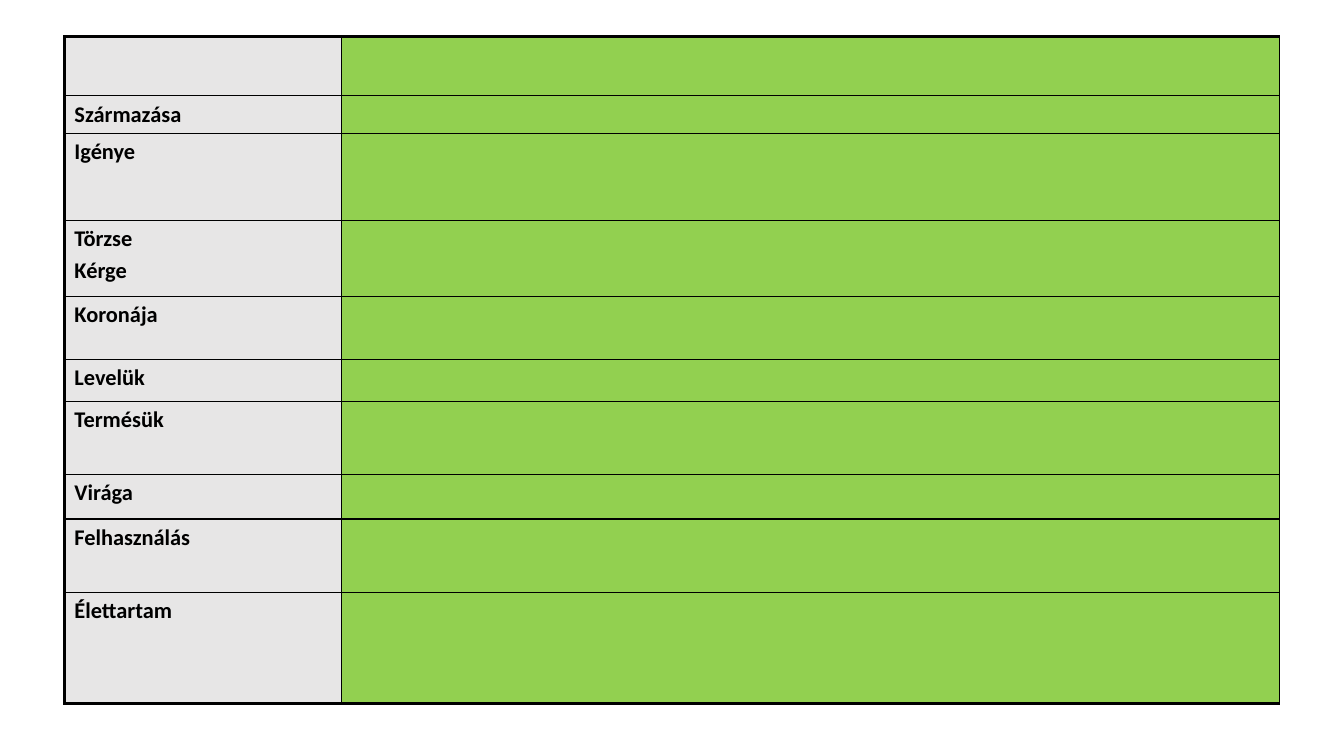
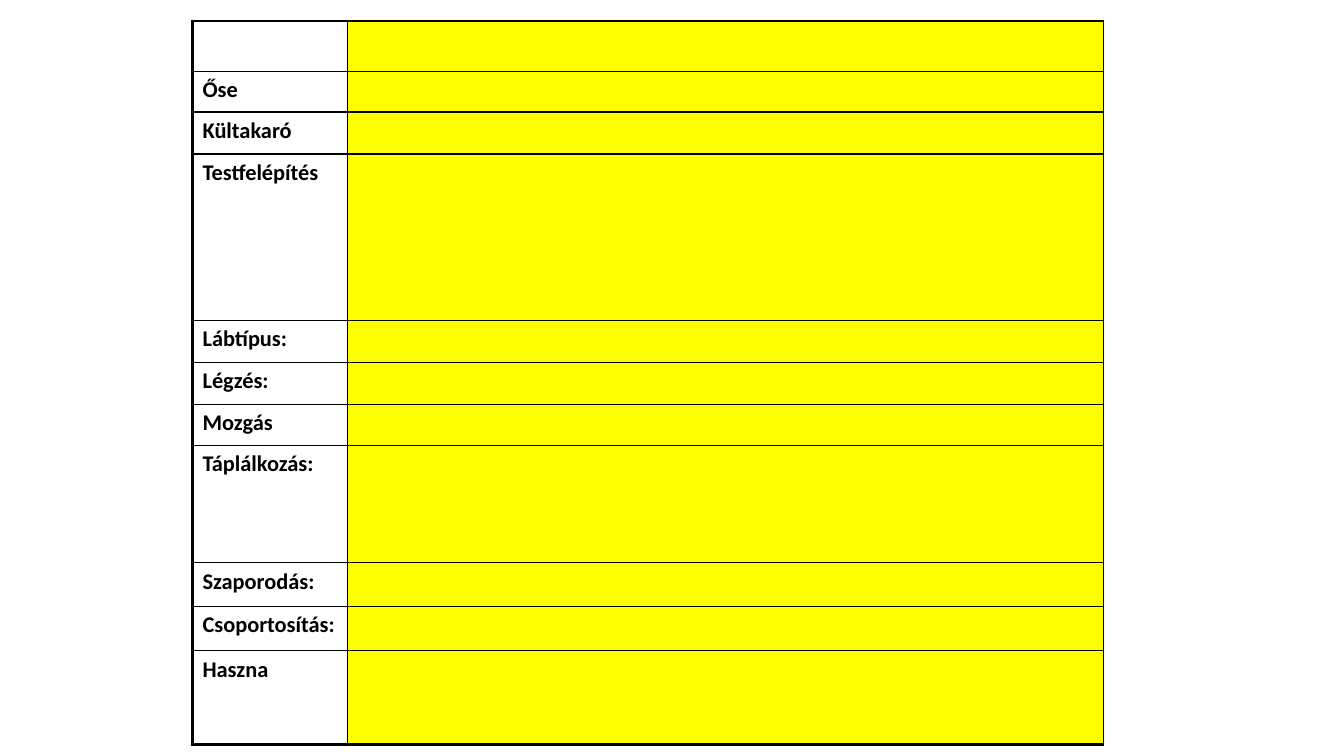
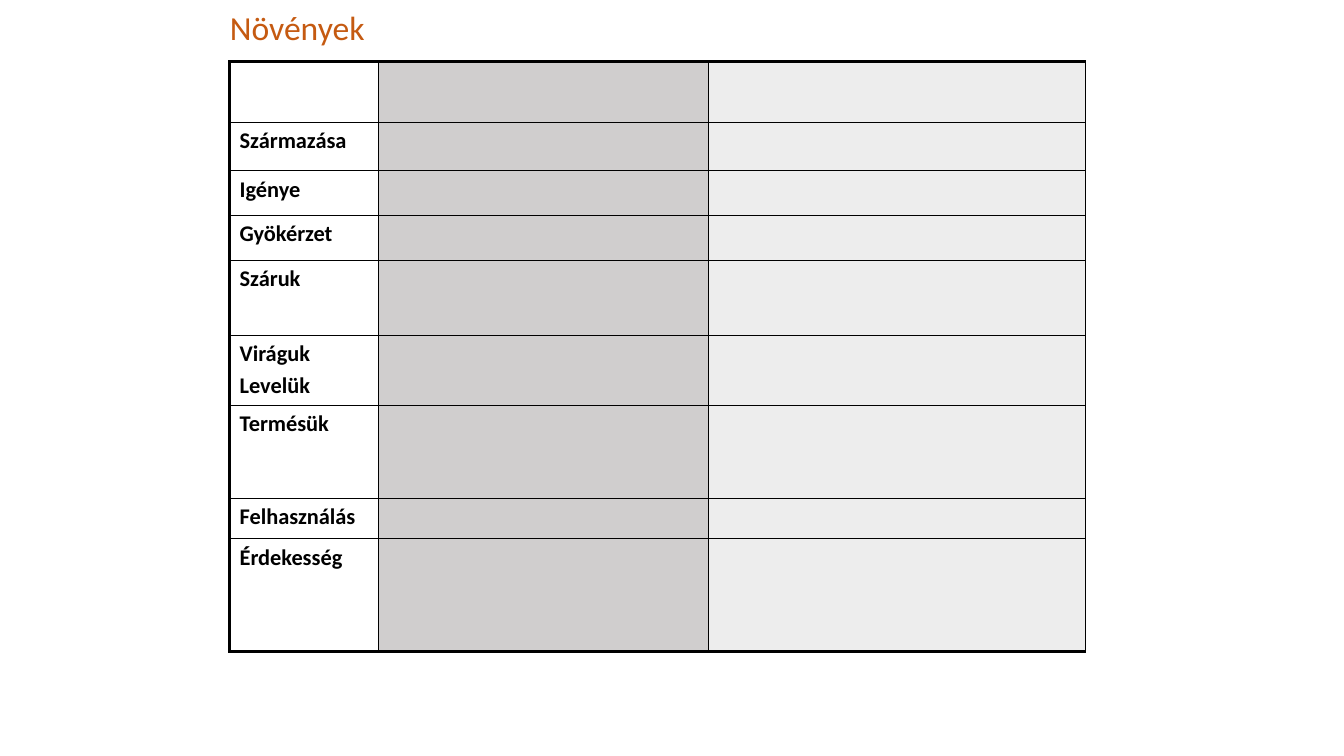
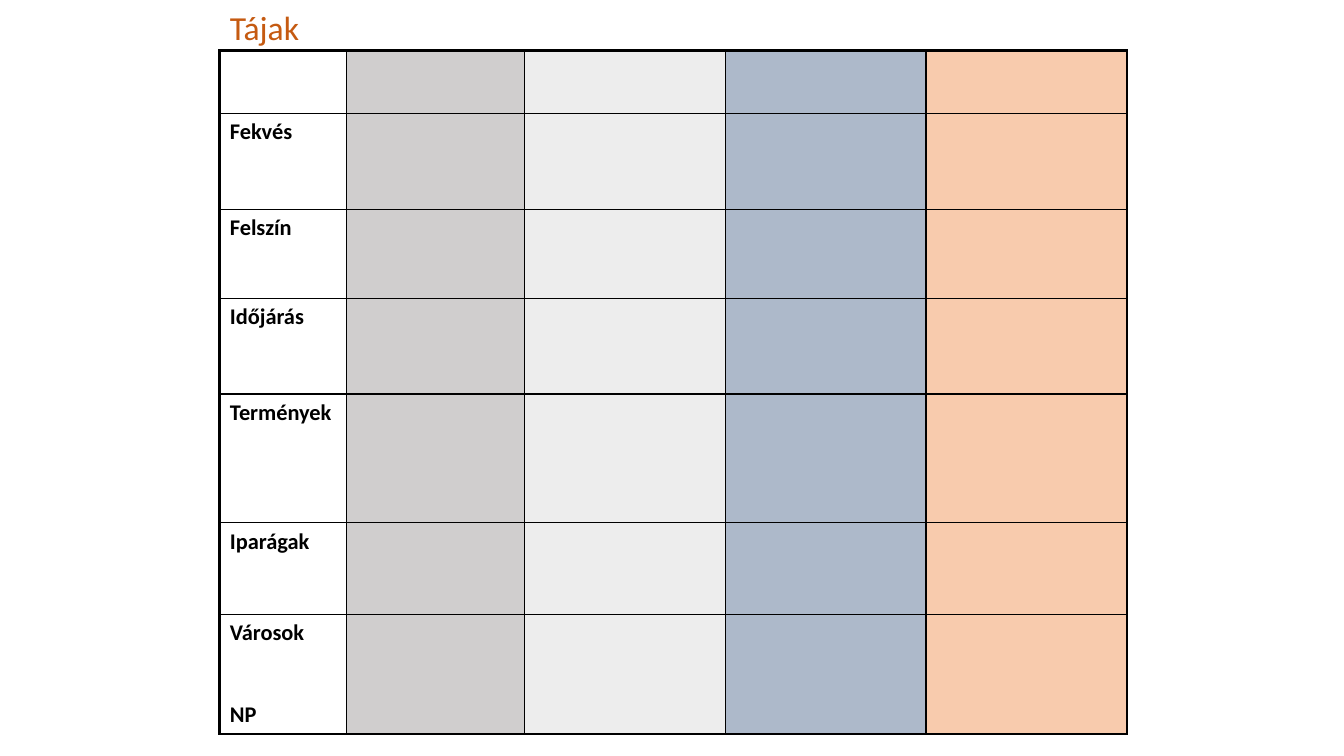
from dataclasses import dataclass

from lxml import etree
from pptx import Presentation
from pptx.dml.color import RGBColor
from pptx.enum import text
from pptx.oxml import ns
from pptx.util import Pt


@dataclass(frozen=True)
class Theme:
    font: str = "Calibri"
    title_size: float = 24
    label_size: float = 16
    line_gap: float = 3.2
    thin: float = 1
    thick: float = 2.25
    ink: str = "000000"
    title: str = "C55A11"
    white: str = "FFFFFF"
    label_gray: str = "E7E6E6"
    gray: str = "D0CECE"
    pale: str = "EDEDED"
    blue: str = "ADB9CA"
    peach: str = "F8CBAD"
    green: str = "92D050"
    yellow: str = "FFFF00"


THEME = Theme()
TITLE_ONLY, BLANK = 5, 6


@dataclass(frozen=True)
class Row:
    height: float
    label: str = ""
    gap: float = THEME.line_gap  # space before a second label line


@dataclass(frozen=True)
class Column:
    width: float
    fill: str


@dataclass(frozen=True)
class Worksheet:
    left: float
    top: float
    columns: list[Column]
    rows: list[Row]
    title: str = ""
    thick_right: bool = False


WORKSHEETS = [
    Worksheet(
        46, 26,
        [Column(198, THEME.label_gray), Column(670, THEME.green)],
        [Row(42.5), Row(26.7, "Származása"), Row(62, "Igénye"),
         Row(54.5, "Törzse\nKérge"), Row(45, "Koronája"), Row(30, "Levelük"),
         Row(52, "Termésük"), Row(32, "Virága"), Row(52.5, "Felhasználás"),
         Row(79.5, "Élettartam")],
    ),
    Worksheet(
        137.5, 15,
        [Column(110.5, THEME.white), Column(540, THEME.yellow)],
        [Row(36), Row(29, "Őse"), Row(30, "Kültakaró"),
         Row(119, "Testfelépítés"), Row(30, "Lábtípus:"), Row(30, "Légzés:"),
         Row(29, "Mozgás"), Row(84, "Táplálkozás:"), Row(31, "Szaporodás:"),
         Row(32, "Csoportosítás:"), Row(67, "Haszna")],
    ),
    Worksheet(
        164, 44,
        [Column(106.5, THEME.white), Column(235.5, THEME.gray),
         Column(269.5, THEME.pale)],
        [Row(43.5), Row(34.5, "Származása"), Row(32, "Igénye"),
         Row(32, "Gyökérzet"), Row(53.5, "Száruk"),
         Row(50, "Viráguk\nLevelük"), Row(66.5, "Termésük"),
         Row(29, "Felhasználás"), Row(80.5, "Érdekesség")],
        title="Növények",
    ),
    Worksheet(
        157, 36,
        [Column(90.5, THEME.white), Column(127, THEME.gray),
         Column(143.5, THEME.pale), Column(143.5, THEME.blue),
         Column(143.5, THEME.peach)],
        [Row(45), Row(68.5, "Fekvés"), Row(63.5, "Felszín"),
         Row(68.5, "Időjárás"), Row(92, "Termények"), Row(65.5, "Iparágak"),
         Row(85.2, "Városok\nNP", gap=39)],
        title="Tájak",
        thick_right=True,
    ),
]


def style_font(font, size: float, color: str, bold: bool = False) -> None:
    font.name = THEME.font
    font.size = Pt(size)
    font.bold = bold
    font.color.rgb = RGBColor.from_string(color)


def write_title(slide, wording: str) -> None:
    title = slide.shapes.title
    title.left, title.top, title.width, title.height = Pt(157), Pt(0), Pt(648), Pt(37.5)
    frame = title.text_frame
    frame.text = wording
    frame.vertical_anchor = text.MSO_ANCHOR.BOTTOM
    frame.auto_size = text.MSO_AUTO_SIZE.NONE
    heading = frame.paragraphs[0]
    heading.alignment = text.PP_ALIGN.LEFT
    heading.line_spacing = 0.9
    style_font(heading.runs[0].font, THEME.title_size, THEME.title)


def draw_borders(cell, thick_sides: dict[str, bool]) -> None:
    """Rule the four sides; the keys stand in the order the schema asks for."""
    properties = cell._tc.get_or_add_tcPr()
    for side, is_thick in thick_sides.items():
        width = Pt(THEME.thick if is_thick else THEME.thin)
        line = etree.SubElement(properties, ns.qn(f"a:ln{side}"), w=str(width))
        fill = etree.SubElement(line, ns.qn("a:solidFill"))
        etree.SubElement(fill, ns.qn("a:srgbClr"), val=THEME.ink)


def write_label(cell, row: Row) -> None:
    cell.text_frame.text = row.label
    for index, paragraph in enumerate(cell.text_frame.paragraphs):
        if index:
            paragraph.space_before = Pt(row.gap)
        for run in paragraph.runs:
            style_font(run.font, THEME.label_size, THEME.ink, bold=True)


def keep_blank(cell) -> None:
    """Give an empty cell the label size, so that it does not stretch its row."""
    ending = cell.text_frame.paragraphs[0]._p.get_or_add_endParaRPr()
    ending.set("sz", str(int(THEME.label_size * 100)))


def draw_table(slide, sheet: Worksheet) -> None:
    rows, columns = sheet.rows, sheet.columns
    table = slide.shapes.add_table(
        len(rows), len(columns), Pt(sheet.left), Pt(sheet.top),
        Pt(sum(column.width for column in columns)),
        Pt(sum(row.height for row in rows)),
    ).table
    table.first_row = table.horz_banding = False
    for c, column in enumerate(columns):
        table.columns[c].width = Pt(column.width)
    for r, row in enumerate(rows):
        table.rows[r].height = Pt(row.height)
        for c, column in enumerate(columns):
            cell = table.cell(r, c)
            draw_borders(cell, {
                "L": c == 0,
                "R": sheet.thick_right and c == len(columns) - 1,
                "T": r == 0,
                "B": r == len(rows) - 1,
            })
            cell.fill.solid()
            cell.fill.fore_color.rgb = RGBColor.from_string(column.fill)
            if c == 0 and row.label:
                write_label(cell, row)
            else:
                keep_blank(cell)


def main() -> None:
    deck = Presentation()
    deck.slide_width, deck.slide_height = Pt(960), Pt(540)
    for sheet in WORKSHEETS:
        layout = deck.slide_layouts[TITLE_ONLY if sheet.title else BLANK]
        slide = deck.slides.add_slide(layout)
        if sheet.title:
            write_title(slide, sheet.title)
        draw_table(slide, sheet)
    deck.save("out.pptx")


if __name__ == "__main__":
    main()
